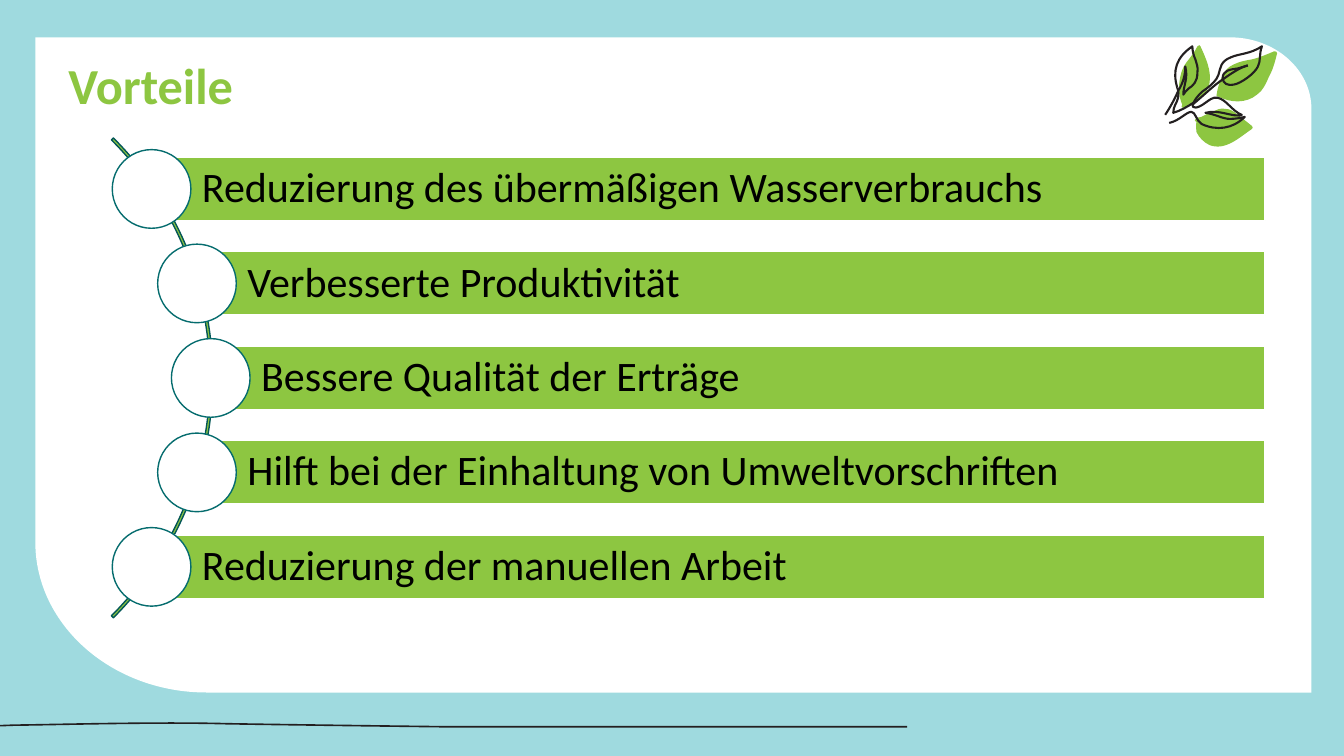
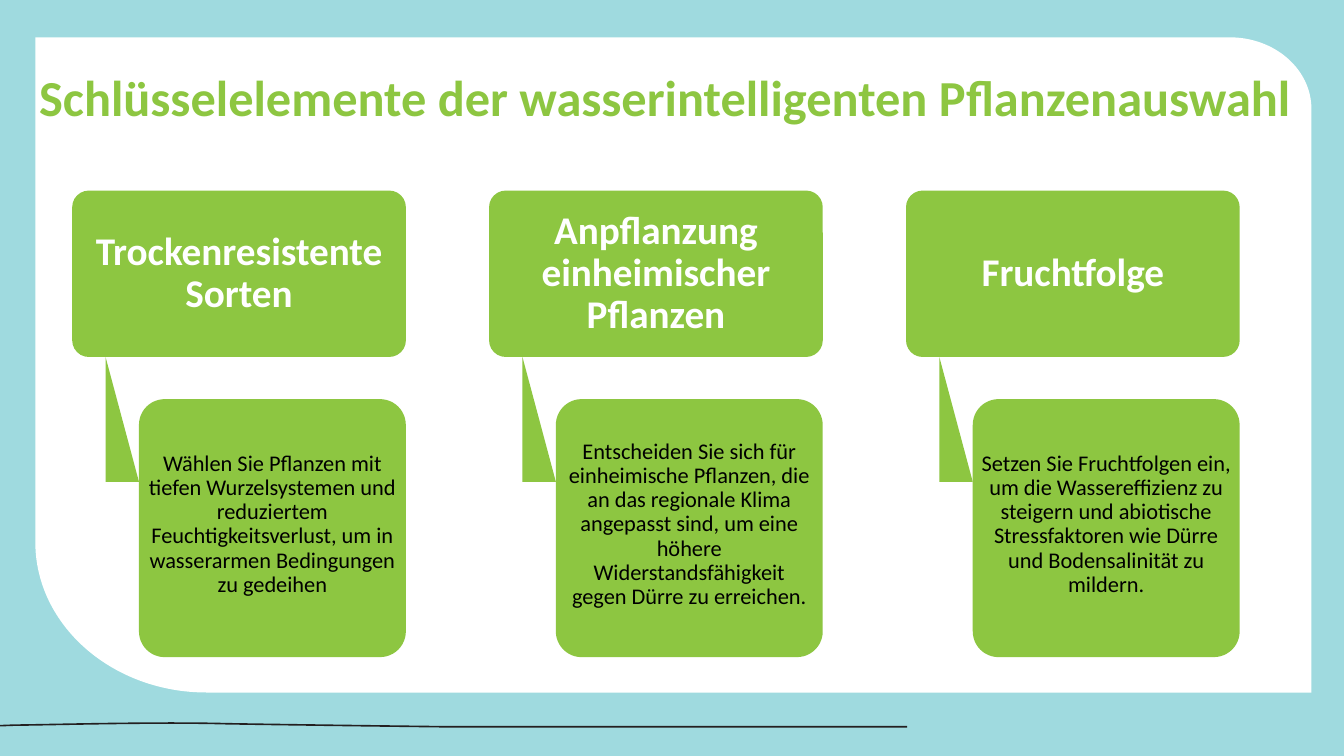
from dataclasses import dataclass
from math import sqrt
from typing import Any

from pptx import Presentation
from pptx.dml.color import RGBColor
from pptx.enum.shapes import MSO_SHAPE
from pptx.enum.text import MSO_ANCHOR, PP_ALIGN
from pptx.oxml.ns import qn
from pptx.shapes.autoshape import Shape
from pptx.slide import Slide
from pptx.util import Inches, Pt

HEIGHT = Inches(7.5)
WIDTH = HEIGHT * 16 // 9
COLUMNS = 100
CELL = WIDTH / COLUMNS

GREEN, SKY, WHITE, BLACK, INK = "8DC641", "9FDADF", "FFFFFF", "000000", "231F20"
TEAL, DARK_TEAL = "056C6E", "035657"

Curve = tuple[float, ...]


@dataclass(frozen=True)
class Box:
    left: float
    top: float
    width: float
    height: float

    def emu(self) -> list[int]:
        return [round(v * CELL) for v in (self.left, self.top, self.width, self.height)]


@dataclass(frozen=True)
class TextStyle:
    size: int
    colour: str
    bold: bool = False
    align: PP_ALIGN = PP_ALIGN.LEFT
    anchor: MSO_ANCHOR = MSO_ANCHOR.MIDDLE
    insets: tuple[float, float, float, float] = (0, 0, 0, 0)


@dataclass(frozen=True)
class Outline:
    start: tuple[float, float]
    curves: tuple[Curve, ...]


@dataclass(frozen=True)
class Card:
    heading: str
    body: str


TITLE = TextStyle(36, GREEN, True, anchor=MSO_ANCHOR.TOP, insets=(7.2, 3.6, 7.2, 3.6))
BAR = TextStyle(30, BLACK, insets=(36, 6, 6, 6))
HEADING = TextStyle(28, WHITE, True, PP_ALIGN.CENTER, insets=(5, 3, 5, 3))
BODY = TextStyle(16, BLACK, align=PP_ALIGN.CENTER, insets=(0.5, 1, 0.5, 6))

PANEL = Outline((2.63, 2.78), (
    (91.5, 2.78), (94.88, 2.78, 97.58, 5.18, 97.58, 8.1), (97.58, 51.53),
    (15.38, 51.53), (8.33, 51.53, 2.63, 46.5, 2.63, 40.35)))
GROUND = Outline((67.5, 54.14), (
    (33.23, 54.14), (33.08, 54.14, 21, 53.99, 16.73, 53.91),
    (11.63, 53.77, 3.9, 53.99, 1.05, 54.02), (0, 54.06), (0, 53.94),
    (1.05, 53.9), (3.9, 53.87, 11.63, 53.65, 16.73, 53.79),
    (21, 53.87, 33.08, 54.02, 33.23, 54.02), (67.5, 54.02)))

SKETCH_ORIGIN, SKETCH_SCALE = (86.25, 3.0), 0.075
LEAVES = (
    Outline((28, 66), (
        (38, 61, 48, 54, 50, 42), (52, 30, 46, 17, 41, 6), (41, 4, 39, 5, 38, 6),
        (35, 12, 31, 17, 27, 22), (24, 26, 22, 31, 21, 36), (19, 46, 19, 55, 23, 64),
        (21, 66, 23, 68, 25, 67))),
    Outline((97, 54), (
        (103, 50, 106, 43, 109, 36), (113, 29, 115, 21, 117, 13),
        (117, 12, 116, 10, 114, 11), (107, 14, 100, 17, 92, 19),
        (86, 20, 80, 21, 74, 24), (69, 26, 65, 30, 63, 35), (60, 41, 58, 47, 57, 54),
        (56, 55, 57, 56, 59, 56), (71, 62, 86, 63, 97, 54))),
    Outline((92, 88), (
        (93, 87, 93, 86, 92, 85), (87, 81, 82, 77, 77, 73), (73, 70, 70, 68, 65, 68),
        (61, 67, 57, 69, 53, 71), (49, 72, 46, 74, 42, 76), (40, 76, 38, 77, 36, 78),
        (35, 79, 35, 81, 37, 81), (36, 85, 37, 88, 37, 91),
        (40, 97, 44, 101, 50, 104), (66, 110, 80, 96, 92, 88))),
)
STROKES = (
    Outline((18, 47), (
        (13, 30, 17, 17, 33, 6), (33, 10, 34, 15, 36, 19), (37, 23, 39, 27, 38, 32),
        (38, 41, 34, 45, 29, 48), (27, 50, 25, 52, 24, 54), (24, 45, 29, 38, 26, 26),
        (26, 34, 24, 42, 19, 50), (17, 55, 12, 65, 6, 74))),
    Outline((18, 47), (
        (21, 55, 18, 60, 16, 64), (15, 66, 14, 69, 14, 72), (21, 70, 28, 66, 34, 62),
        (38, 55, 42, 51, 47, 48), (52, 44, 57, 40, 59, 34), (61, 27, 61, 21, 71, 17),
        (80, 13, 90, 14, 102, 6), (99, 14, 101, 21, 98, 26),
        (95, 33, 81, 43, 74, 44), (67, 45, 64, 43, 63, 38), (63, 30, 70, 29, 78, 28),
        (88, 25))),
    Outline((88, 25), (
        (80, 27, 70, 34, 63, 39), (55, 44, 45, 54, 33, 64), (33, 68, 38, 68, 46, 62),
        (49, 60, 53, 56, 58, 57), (67, 59, 72, 70, 82, 74), (73, 77, 60, 68, 46, 72),
        (55, 73, 63, 78, 70, 78), (76, 78, 81, 77, 85, 76),
        (73, 88, 57, 90, 42, 83), (37, 80, 36, 71, 32, 71), (27, 71, 20, 80, 10, 82))),
)

BENEFITS = (
    "Reduzierung des übermäßigen Wasserverbrauchs",
    "Verbesserte Produktivität",
    "Bessere Qualität der Erträge",
    "Hilft bei der Einhaltung von Umweltvorschriften",
    "Reduzierung der manuellen Arbeit",
)
CARDS = (
    Card("Trockenresistente Sorten",
         "Wählen Sie Pflanzen mit tiefen Wurzelsystemen und reduziertem "
         "Feuchtigkeitsverlust, um in wasserarmen Bedingungen zu gedeihen"),
    Card("Anpflanzung einheimischer Pflanzen",
         "Entscheiden Sie sich für einheimische Pflanzen, die an das regionale Klima "
         "angepasst sind, um eine höhere Widerstandsfähigkeit gegen Dürre zu erreichen."),
    Card("Fruchtfolge",
         "Setzen Sie Fruchtfolgen ein, um die Wassereffizienz zu steigern und abiotische "
         "Stressfaktoren wie Dürre und Bodensalinität zu mildern."),
)


def rgb(colour: str) -> RGBColor:
    return RGBColor.from_string(colour)


def assign(target: Any, values: dict[str, Any]) -> None:
    for name, value in values.items():
        setattr(target, name, value)


def paint(sp: Shape, fill: str | None, line: str | None = None, width: float = 1) -> Shape:
    sp.shadow.inherit = False
    for fmt, colour in ((sp.fill, fill), (sp.line.fill, line)):
        if colour is None:
            fmt.background()
        else:
            fmt.solid()
            fmt.fore_color.rgb = rgb(colour)
    if line:
        sp.line.width = Pt(width)
    return sp


def write(sp: Shape, text: str, style: TextStyle) -> None:
    tf = sp.text_frame
    assign(tf, {"word_wrap": True, "vertical_anchor": style.anchor})
    sides = ("margin_left", "margin_top", "margin_right", "margin_bottom")
    assign(tf, dict(zip(sides, map(Pt, style.insets))))
    p = tf.paragraphs[0]
    assign(p, {"alignment": style.align, "line_spacing": 0.9})
    r = p.add_run()
    r.text = text
    assign(r.font, {"name": "Calibri", "size": Pt(style.size), "bold": style.bold})
    r.font.color.rgb = rgb(style.colour)


def add_block(s: Slide, kind: MSO_SHAPE, box: Box, fill: str,
              line: str | None = None) -> Shape:
    return paint(s.shapes.add_shape(kind, *box.emu()), fill, line)


def bend(sp: Shape, curves: list[Curve]) -> None:
    legs = iter(list(sp.element.iter(qn("a:lnTo"))))
    for curve in curves:
        leg = next(legs)
        if len(curve) == 6:
            leg.tag = qn("a:cubicBezTo")
            for extra in (next(legs), next(legs)):
                leg.append(extra[0])
                extra.getparent().remove(extra)


def add_outlines(s: Slide, outlines: tuple[Outline, ...], fill: str | None,
                 line: str | None = None, width: float = 1,
                 origin: tuple[float, float] = (0, 0), scale: float = 1) -> None:
    def place(x: float, y: float) -> tuple[int, int]:
        return round((origin[0] + x * scale) * CELL), round((origin[1] + y * scale) * CELL)

    builder = s.shapes.build_freeform(*place(*outlines[0].start))
    for i, outline in enumerate(outlines):
        if i:
            builder.move_to(*place(*outline.start))
        points = [place(*curve[k:k + 2])
                  for curve in outline.curves for k in range(0, len(curve), 2)]
        builder.add_line_segments(points, close=fill is not None)
    sp = builder.convert_to_shape()
    bend(sp, [curve for outline in outlines for curve in outline.curves])
    paint(sp, fill, line, width)


def add_page(prs: Presentation, title: str, box: Box) -> Slide:
    s = prs.slides.add_slide(prs.slide_layouts[6])
    s.background.fill.solid()
    s.background.fill.fore_color.rgb = rgb(SKY)
    add_outlines(s, (PANEL,), WHITE)
    add_outlines(s, (GROUND,), INK)
    write(s.shapes.add_textbox(*box.emu()), title, TITLE)
    return s


def add_sketch(s: Slide) -> None:
    for leaf in LEAVES:
        add_outlines(s, (leaf,), GREEN, origin=SKETCH_ORIGIN, scale=SKETCH_SCALE)
    add_outlines(s, STROKES, None, INK, 1.5, SKETCH_ORIGIN, SKETCH_SCALE)


def add_benefits(s: Slide) -> None:
    centre_x, centre_y, radius = -8.98, 28.12, 24.66
    pitch, bar_height, bar_right, dot = 7.03, 4.73, 94.13, 5.85
    arc = add_block(s, MSO_SHAPE.BLOCK_ARC, Box(-34.65, 2.88, 50.48, 50.48), GREEN, DARK_TEAL)
    for i, value in enumerate((189, 27, 0.004)):
        arc.adjustments[i] = value
    for i, text in enumerate(BENEFITS):
        offset = (i - (len(BENEFITS) - 1) / 2) * pitch
        x, y = centre_x + sqrt(radius ** 2 - offset ** 2), centre_y + offset
        bar = add_block(s, MSO_SHAPE.RECTANGLE,
                        Box(x, y - bar_height / 2, bar_right - x, bar_height), GREEN, WHITE)
        write(bar, text, BAR)
        add_block(s, MSO_SHAPE.OVAL, Box(x - dot / 2, y - dot / 2, dot, dot), WHITE, TEAL)


def add_card(s: Slide, card: Card, left: float) -> None:
    parts = ((Box(left, 14.18, 24.83, 12.38), card.heading, HEADING),
             (Box(left + 4.97, 29.7, 19.86, 19.2), card.body, BODY))
    for box, text, style in parts:
        sp = add_block(s, MSO_SHAPE.ROUNDED_RECTANGLE, box, GREEN)
        sp.adjustments[0] = 0.1
        write(sp, text, style)
    stem = left + 2.48
    wedge = Outline((stem, 26.55), ((stem, 35.85), (stem + 2.49, 35.85)))
    add_outlines(s, (wedge,), GREEN)


def main() -> None:
    prs = Presentation()
    assign(prs, {"slide_width": WIDTH, "slide_height": HEIGHT})

    s = add_page(prs, "Vorteile", Box(4.35, 4.17, 86.93, 6.6))
    add_benefits(s)
    add_sketch(s)

    s = add_page(prs, "Schlüsselelemente der wasserintelligenten Pflanzenauswahl",
                 Box(2.18, 5.03, 95.63, 6.6))
    for i, card in enumerate(CARDS):
        add_card(s, card, 5.37 + 31.02 * i)

    prs.save("out.pptx")


if __name__ == "__main__":
    main()
